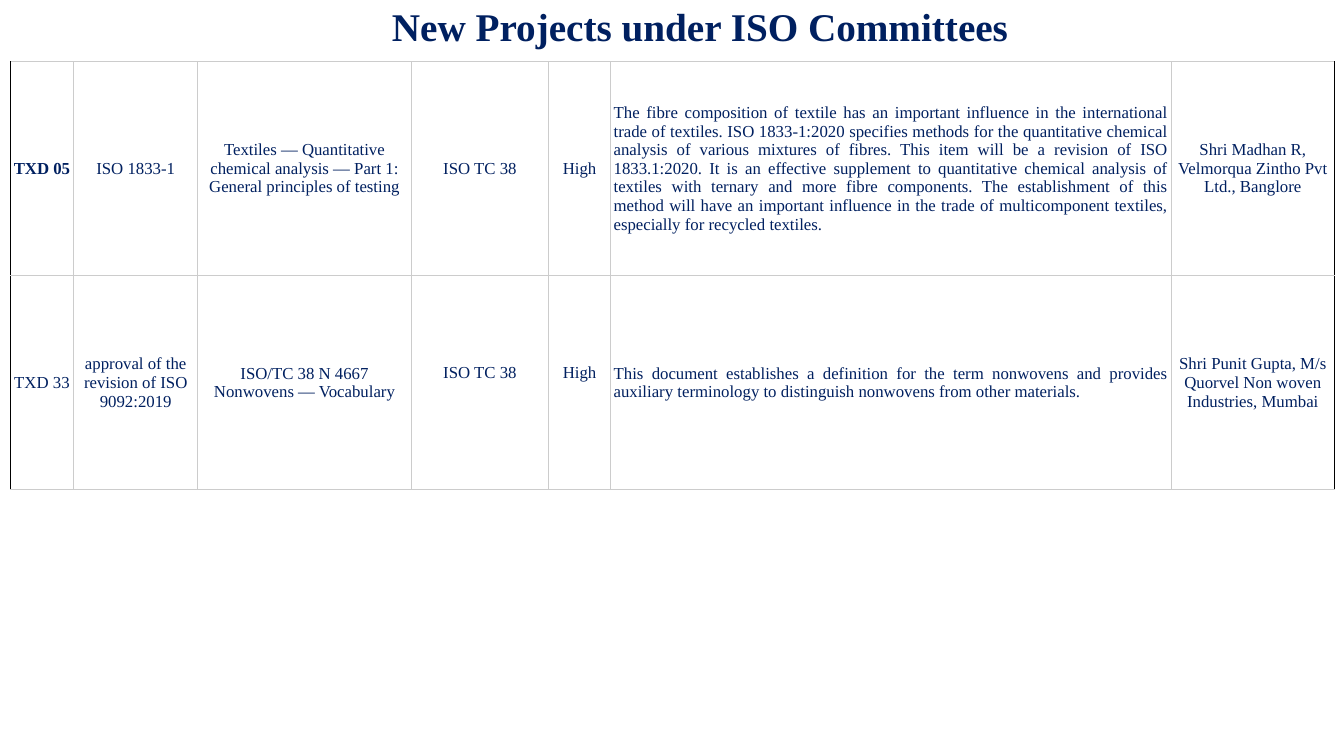
from pptx import Presentation
from pptx.dml.color import RGBColor
from pptx.enum.text import MSO_ANCHOR as Anchor, PP_ALIGN as Align
from pptx.oxml.ns import qn
from pptx.util import Pt
from lxml.etree import SubElement as Sub

FONT = "Times New Roman"
NAVY, GREY, BLACK = "002060", "CCCCCC", "000000"
WIDTHS = [45.4, 88.6, 152.6, 97.9, 44.6, 400.3, 116.6]
PROSE = 5   # justified column
LINE = 13.6

ROWS = [
    ["TXD 05", "ISO 1833-1",
     "Textiles — Quantitative chemical analysis — Part 1: General principles of testing",
     "ISO TC 38", "High",
     "The fibre composition of textile has an important influence in the "
     "international trade of textiles. ISO 1833-1:2020 specifies methods for the "
     "quantitative chemical analysis of various mixtures of fibres. This item will "
     "be a revision of ISO 1833.1:2020. It is an effective supplement to "
     "quantitative chemical analysis of textiles with ternary and more fibre "
     "components. The establishment of this method will have an important influence "
     "in the trade of multicomponent textiles, especially for recycled textiles.",
     "Shri Madhan R, Velmorqua Zintho Pvt Ltd., Banglore"],
    ["TXD 33", "approval of the revision of ISO 9092:2019",
     "ISO/TC 38 N 4667 Nonwovens — Vocabulary",
     "ISO TC 38", "High",
     "This document establishes a definition for the term nonwovens and provides "
     "auxiliary terminology to distinguish nonwovens from other materials.",
     "Shri Punit Gupta, M/s Quorvel Non woven Industries, Mumbai"],
]
RAISED = {(1, 3), (1, 4)}   # cells set half a line above the middle


def color(code):
    return RGBColor.from_string(code)


def write(frame, text, size=12, bold=False, align=Align.CENTER):
    frame.word_wrap = True
    para = frame.paragraphs[0]
    para.alignment = align
    run = para.add_run()
    run.text = text
    font = run.font
    font.name, font.size, font.bold = FONT, Pt(size), bold
    font.color.rgb = color(NAVY)


def border(cell, sides):
    props = cell._tc.get_or_add_tcPr()
    for spot, (side, code) in enumerate(sides.items()):
        line = Sub(props, qn("a:" + side), w=str(Pt(0.75)))
        fill = Sub(line, qn("a:solidFill"))
        Sub(fill, qn("a:srgbClr"), val=code)
        props.insert(spot, line)   # borders come before the fill


def title(slide, left, top, width, height):
    box = slide.shapes.add_textbox(Pt(left), Pt(top), Pt(width), Pt(height))
    write(box.text_frame, "New Projects under ISO Committees", size=28, bold=True)


def projects(slide, left, top, width, height):
    table = slide.shapes.add_table(len(ROWS), len(WIDTHS), Pt(left), Pt(top),
                                   Pt(width), Pt(height)).table
    table.first_row = table.horz_banding = False
    for col, wide in zip(table.columns, WIDTHS):
        col.width = Pt(wide)
    last = len(WIDTHS) - 1
    for r, texts in enumerate(ROWS):
        table.rows[r].height = Pt(height / len(ROWS))
        for c, text in enumerate(texts):
            cell = table.cell(r, c)
            cell.fill.background()
            cell.vertical_anchor = Anchor.MIDDLE
            cell.margin_left = cell.margin_right = Pt(2)
            cell.margin_top = Pt(1.4)
            cell.margin_bottom = Pt(1.4 + (LINE if (r, c) in RAISED else 0))
            write(cell.text_frame, text, bold=(r == c == 0),
                  align=Align.JUSTIFY if c == PROSE else Align.CENTER)
            # Black outer sides, grey elsewhere
            border(cell, {"lnL": GREY if c else BLACK,
                          "lnR": BLACK if c == last else GREY,
                          "lnT": GREY, "lnB": GREY})


def main():
    deck = Presentation()
    deck.slide_width, deck.slide_height = Pt(960), Pt(540)
    slide = deck.slides.add_slide(deck.slide_layouts[6])
    projects(slide, 7.3, 44, sum(WIDTHS), 306)
    title(slide, 214.5, -2.2, 571, 41)
    deck.save("out.pptx")


if __name__ == "__main__":
    main()
